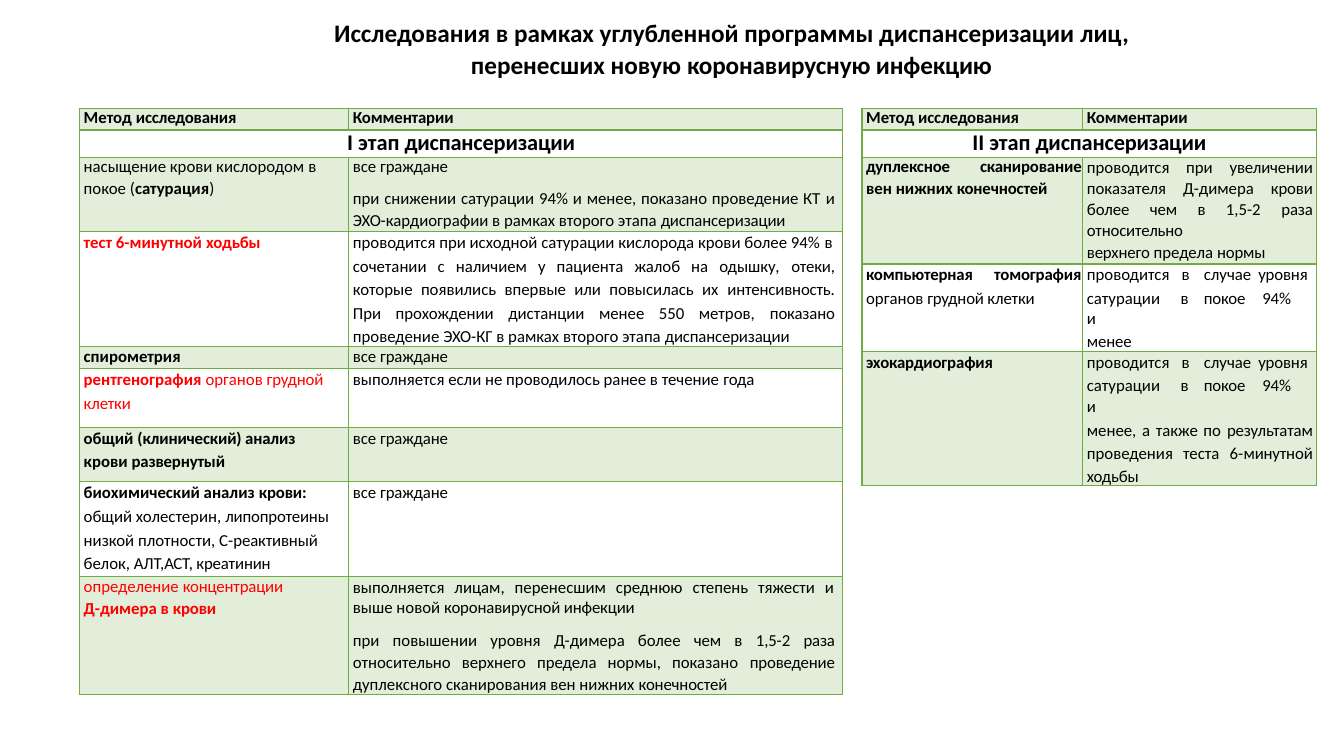
from lxml import etree
from pptx import Presentation
from pptx.dml.color import RGBColor
from pptx.enum.text import PP_ALIGN
from pptx.oxml.ns import qn
from pptx.util import Inches, Pt

COLORS = {"text": "000000", "accent": "FF0000", "border": "6FAC46", "band": "E2EEDA"}
FONT = "Calibri"
INDENT = 0.04
C, J = PP_ALIGN.CENTER, PP_ALIGN.JUSTIFY

# "*" switches bold on and off, "|" switches tighter letter spacing on and off
TITLE = [
    ("*Исследования в рамках углубленной программы диспансеризации| лиц,|*", dict(before=2.5)),
    ("*перенесших новую |коронавирусную инфекцию|*", dict(before=1.6)),
]
HEAD = [
    [("*Метод |исследования|*", dict(line=Pt(13.8)))],
    [("*|Комментарии|*", dict(line=Pt(13.7)))],
]
ALL = [("все |граждане|", dict(before=0.6))]
LEVEL = ("проводится\tв\tслучае\t|уровня|", dict(before=0.5, tabs=[0.94, 1.16, 1.7]))
REST = ("сатурации\tв\t|покое\t94%\tи|", dict(before=2.1, tabs=[0.93, 1.16, 1.74, 2.19]))

STAGES = [
    dict(
        left=0.79, cols=[2.67, 4.9], gap=0.08,
        heights=[0.21, 0.27, 0.74, 1.14, 0.22, 0.58, 0.54, 0.94, 1.17],
        name="*I этап |диспансеризации|*",
        rows=[
            ([("насыщение крови кислородом |в|", dict(line=Pt(13.9))),
              ("покое |(|*сатурация*)", dict(before=1.1))],
             [("все |граждане|", dict(line=Pt(13.9))),
              ("при снижении сатурации 94% и менее, показано проведение КТ |и ЭХО-|кардиографии "
               "в рамках второго этапа |диспансеризации|", dict(line=1.07, before=7.7, align=J))]),
            ([("*тест 6-минутной |ходьбы|*", dict(before=0.5, color="accent"))],
             [("проводится при исходной сатурации кислорода крови более 94% |в|",
               dict(before=0.5, align=J)),
              ("сочетании с наличием у пациента жалоб на одышку, |отеки, |которые появились "
               "впервые или повысилась их |интенсивность. |При прохождении дистанции менее "
               "550 метров, |показано |проведение |ЭХО-|КГ в рамках второго этапа "
               "|диспансеризации|", dict(line=1.15, align=J))]),
            ([("*спирометрия*", dict(line=Pt(14.1), before=0.6))],
             [("все |граждане|", dict(line=Pt(14.1), before=0.6))]),
            ([("*рентгенография *органов |грудной|", dict(before=0.6, color="accent")),
              ("|клетки|", dict(before=2.1, color="accent"))],
             [("выполняется если не проводилось ранее в течение| года|", dict(before=0.6))]),
            ([("*общий |(клинический) анализ|*", dict(before=0.6)),
              ("*крови |развернутый|*", dict(before=2.1))], ALL),
            ([("*биохимический анализ |крови:|*", dict(before=0.6)),
              ("общий холестерин, |липопротеины |низкой плотности, С-|реактивный |белок, "
               "|АЛТ,АСТ, креатинин|", dict(line=Pt(16.6), before=0.8))], ALL),
            ([("определение |концентрации|", dict(line=Pt(14), color="accent")),
              ("*Д-димера в |крови|*", dict(before=1.1, color="accent"))],
             [("выполняется лицам, перенесшим среднюю степень тяжести и выше новой "
               "|коронавирусной инфекции|", dict(align=J)),
              ("при повышении уровня |Д-|димера более чем в |1,5-|2 |раза |относительно "
               "верхнего предела нормы, показано |проведение |дуплексного сканирования вен "
               "нижних |конечностей|", dict(line=1.07, before=7.8, align=J))]),
        ],
    ),
    dict(
        left=8.55, cols=[2.19, 2.32], gap=0.04, heights=[0.21, 0.27, 1.06, 0.68, 1.14],
        name="*II этап |диспансеризации|*",
        rows=[
            ([("*|дуплексное\tсканирование|*", dict(line=Pt(13.9), tabs=[1.13])),
              ("*вен нижних |конечностей|*", dict(before=1.1))],
             [("проводится при |увеличении |показателя |Д-|димера |крови |более чем в 1,5-2 "
               "|раза относительно\tверхнего |предела |нормы|",
               dict(line=1.03, align=J, tabs=[1.64]))]),
            ([("*|компьютерная\tтомография|*", dict(before=0.5, tabs=[1.27])),
              ("органов |грудной клетки|", dict(before=2.1))],
             [LEVEL, REST, ("|менее|", dict(line=Pt(14.1), before=2.2))]),
            ([("*|эхокардиография|*", dict(before=0.5))],
             [LEVEL, REST,
              ("менее, а также по |результатам |проведения теста 6-|минутной ходьбы|",
               dict(line=1.13, before=1, align=J))]),
        ],
    ),
]


def rgb(name):
    return RGBColor.from_string(COLORS[name])


def add_text(p, text, size=12, color="text", align=None, line=None, before=0, indent=INDENT, tabs=()):
    p.alignment = align
    p.space_before = Pt(before)
    if line:
        p.line_spacing = line
    pPr = p._p.get_or_add_pPr()
    pPr.set("marL", str(Inches(indent)))
    if tabs:
        stops = etree.SubElement(pPr, qn("a:tabLst"))
        for pos in tabs:
            etree.SubElement(stops, qn("a:tab"), pos=str(Inches(pos)), algn="l")
    tight = False
    for i, chunk in enumerate(text.split("*")):
        for j, part in enumerate(chunk.split("|")):
            if j:
                tight = not tight
            if not part:
                continue
            r = p.add_run()
            r.text = part
            r.font.name, r.font.size, r.font.bold = FONT, Pt(size), i % 2 == 1
            r.font.color.rgb = rgb(color)
            if tight:
                r._r.get_or_add_rPr().set("spc", "-10")


def fill_frame(tf, paragraphs, **common):
    for i, (text, fmt) in enumerate(paragraphs):
        p = tf.add_paragraph() if i else tf.paragraphs[0]
        add_text(p, text, **{**common, **fmt})


def style_cell(cell, row, gap):
    cell.margin_left = cell.margin_bottom = 0
    cell.margin_right = Inches(gap)
    cell.margin_top = Inches(0.01 if row > 2 else 0)
    tcPr = cell._tc.get_or_add_tcPr()
    for side in ("lnL", "lnR", "lnT", "lnB"):
        ln = etree.SubElement(tcPr, qn("a:" + side), w=str(Pt(1)))
        solid = etree.SubElement(ln, qn("a:solidFill"))
        etree.SubElement(solid, qn("a:srgbClr"), val=COLORS["border"])
    if row % 2:
        cell.fill.background()
    else:
        cell.fill.solid()
        cell.fill.fore_color.rgb = rgb("band")


def add_stage(s, left, cols, gap, heights, name, rows):
    tbl = s.shapes.add_table(len(heights), len(cols), Inches(left), Inches(1.08),
                             Inches(sum(cols)), Inches(sum(heights))).table
    tbl.first_row = tbl.horz_banding = False
    for col, width in zip(tbl.columns, cols):
        col.width = Inches(width)
    for row, height in zip(tbl.rows, heights):
        row.height = Inches(height)
    banner = [[(name, dict(size=16, align=C, line=Pt(18.6), indent=0))], []]
    for i, contents in enumerate([HEAD, banner, *rows]):
        for j, paragraphs in enumerate(contents):
            cell = tbl.cell(i, j)
            style_cell(cell, i, gap * j)
            fill_frame(cell.text_frame, paragraphs)
    tbl.cell(1, 0).merge(tbl.cell(1, 1))


prs = Presentation()
prs.slide_width, prs.slide_height = Inches(13.33), Inches(7.5)
s = prs.slides.add_slide(prs.slide_layouts[6])

tf = s.shapes.add_textbox(Inches(3.29), Inches(0.14), Inches(7.93), Inches(0.67)).text_frame
tf.word_wrap = True
tf.margin_left = tf.margin_right = tf.margin_bottom = 0
tf.margin_top = Inches(0.03)
fill_frame(tf, TITLE, size=18, align=C, indent=0)

for stage in STAGES:
    add_stage(s, **stage)

prs.save("out.pptx")
